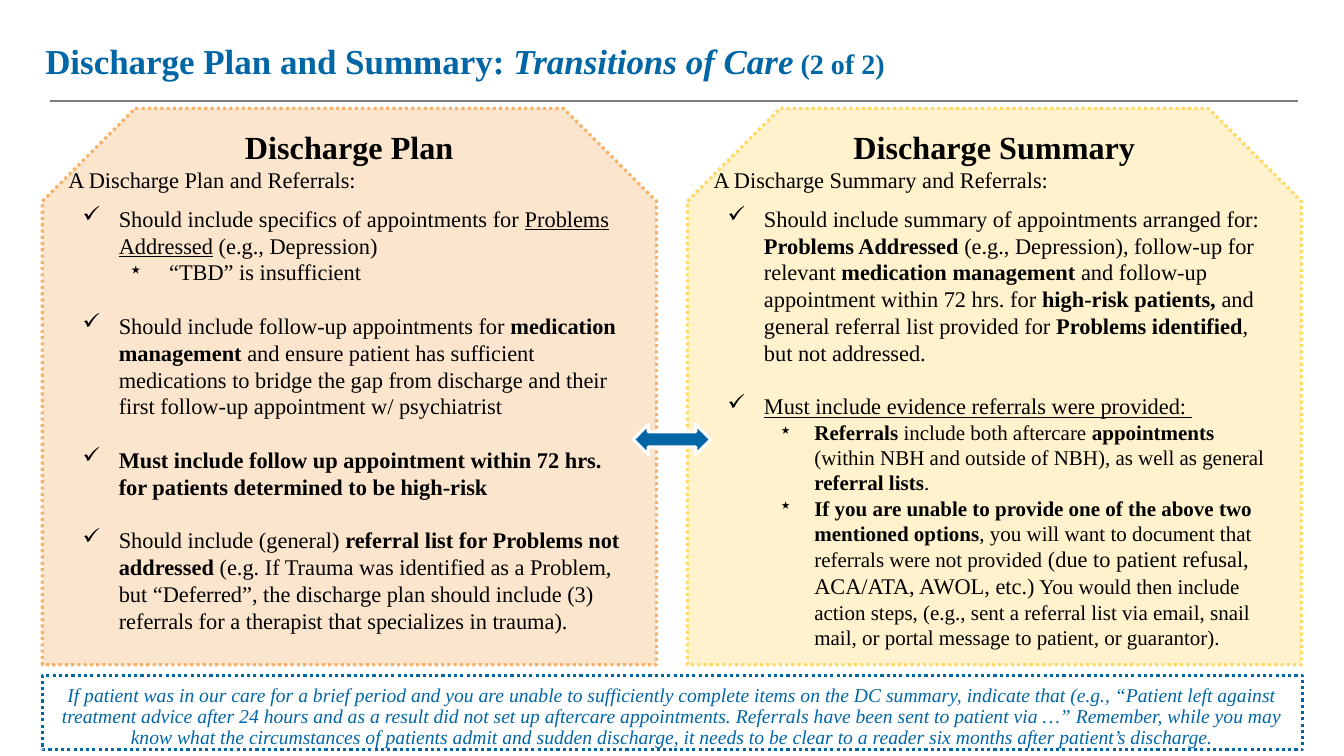
"""Build a slide that sets a discharge plan beside a discharge summary."""
from pptx import Presentation
from pptx.dml.color import RGBColor
from pptx.enum.dml import MSO_LINE_DASH_STYLE as DASH
from pptx.enum.shapes import MSO_CONNECTOR, MSO_SHAPE as SHAPE
from pptx.enum.text import MSO_ANCHOR as ANCHOR, PP_ALIGN as ALIGN
from pptx.oxml.ns import qn
from pptx.util import Inches, Pt
from lxml.etree import SubElement

BLUE = RGBColor(0x00, 0x66, 0xA6)
BLACK = RGBColor(0x00, 0x00, 0x00)
WHITE = RGBColor(0xFF, 0xFF, 0xFF)
GREY = RGBColor(0x7F, 0x7F, 0x7F)
PEACH = RGBColor(0xFC, 0xE5, 0xCD)
ORANGE = RGBColor(0xF6, 0xB2, 0x6B)
CREAM = RGBColor(0xFF, 0xF2, 0xCC)
YELLOW = RGBColor(0xFF, 0xD9, 0x66)

FONT = "Times New Roman"
WIDTH, HEIGHT = Inches(13.33), Inches(7.5)
LEFT, TOP, PITCH = 3.15, 14.33, 48
PANEL_W, PANEL_H, PAD = 45.69, 73.6, 1.2
GAP, INTRO_GAP = 19, 8.5
STYLES = {"b": {"bold": True}, "i": {"italic": True}, "u": {"underline": True}}
BULLETS = {"check": ("✓", 0, 0.5, 0.36),
           "star": ("⋆", 1, 1, 0.4),
           "small star": ("⋆", 1, 1, 0.35)}

PLAN = [
    ("check", INTRO_GAP, 16, [
        ("Should include specifics of appointments for ", ""),
        ("Problems Addressed", "u"), (" (e.g., Depression)", "")]),
    ("star", 0, 16, [("“TBD” is insufficient", "")]),
    ("check", GAP, 16, [
        ("Should include follow-up appointments for ", ""),
        ("medication management ", "b"),
        ("and ensure patient has sufficient medications to bridge the gap from "
         "discharge and their first follow-up appointment w/ psychiatrist", "")]),
    ("check", GAP, 16, [
        ("Must include follow up appointment within 72 hrs. for patients "
         "determined to be high-risk", "b")]),
    ("check", GAP, 16, [
        ("Should include (general) ", ""),
        ("referral list for Problems not addressed ", "b"),
        ("(e.g. If Trauma was identified as a Problem, but “Deferred”, the "
         "discharge plan should include (3) referrals for a therapist that "
         "specializes in trauma).", "")]),
]
SUMMARY = [
    ("check", INTRO_GAP, 16, [
        ("Should include summary of appointments arranged for: ", ""),
        ("Problems Addressed ", "b"),
        ("(e.g., Depression), follow-up for relevant ", ""),
        ("medication management ", "b"),
        ("and follow-up appointment within 72 hrs. for ", ""),
        ("high-risk patients, ", "b"),
        ("and general referral list provided for ", ""),
        ("Problems identified", "b"), (", but not addressed.", "")]),
    ("check", GAP, 16, [
        ("Must include evidence referrals were provided: ", "u")]),
    ("small star", 0, 15, [
        ("Referrals", "b"), (" include both aftercare ", ""),
        ("appointments", "b"),
        (" (within NBH and outside of NBH), as well as general ", ""),
        ("referral lists", "b"), (".", "")]),
    ("small star", 0, 15, [
        ("If you are unable to provide one of the above two mentioned options",
         "b"),
        (", you will want to document that referrals were not provided", ""),
        (" (due to patient refusal, ACA/ATA, AWOL, etc.)", "", 16),
        (" You would then include action steps, (e.g., sent a referral list via "
         "email, snail mail, or portal message to patient, or guarantor).", "")]),
]
NOTE = (
    "If patient was in our care for a brief period and you are unable to "
    "sufficiently complete items on the DC summary, indicate that (e.g., “Patient "
    "left against treatment advice after 24 hours and as a result did not set up "
    "aftercare appointments. Referrals have been sent to patient via …” Remember, "
    "while you may know what the circumstances of patients admit and sudden "
    "discharge, it needs to be clear to a reader six months after patient’s "
    "discharge.")


def set_all(target, values):
    """Set each attribute of target from a dict."""
    for name, value in values.items():
        setattr(target, name, value)


def place(x, y, w, h):
    """Turn percentages of the slide's size into lengths."""
    return [int(side * share / 100)
            for side, share in zip((WIDTH, HEIGHT, WIDTH, HEIGHT), (x, y, w, h))]


def add_runs(p, runs, size, color=BLACK):
    """Add styled runs to a paragraph; a run may carry its own size."""
    for text, style, *own in runs:
        r = p.add_run()
        r.text = text
        set_all(r.font, {"name": FONT, "size": Pt(own[0] if own else size)})
        r.font.color.rgb = color
        for letter in style:
            set_all(r.font, STYLES[letter])


def add_bullet(p, kind):
    """Give a paragraph its bullet, level and hanging indent."""
    char, level, left, hang = BULLETS[kind]
    p.level = level
    pPr = p._p.get_or_add_pPr()
    pPr.set("marL", str(Inches(left)))
    pPr.set("indent", str(-Inches(hang)))
    SubElement(SubElement(pPr, qn("a:buClr")), qn("a:srgbClr"), val=str(BLACK))
    SubElement(pPr, qn("a:buChar"), char=char)


def format_frame(sp, inset_y=0.1, anchor=ANCHOR.TOP):
    """Set wrap, anchor and insets of a shape's text and return its frame."""
    tf = sp.text_frame
    set_all(tf, {"word_wrap": True, "vertical_anchor": anchor,
                 "margin_left": Inches(0.1), "margin_right": Inches(0.1),
                 "margin_top": Inches(inset_y), "margin_bottom": Inches(inset_y)})
    return tf


def add_outlined(s, preset, area, fill, line, dash=None):
    """Add a preset shape with an optional fill and an outline."""
    sp = s.shapes.add_shape(preset, *place(*area))
    sp.shadow.inherit = False
    if fill is None:
        sp.fill.background()
    else:
        sp.fill.solid()
        sp.fill.fore_color.rgb = fill
    sp.line.color.rgb = line
    set_all(sp.line, {"width": Pt(2.25), "dash_style": dash})
    return sp


def add_rule(s):
    """Draw the line below the title."""
    x, y, w, _ = place(3.75, 13.33, 92.8, 0)
    rule = s.shapes.add_connector(MSO_CONNECTOR.STRAIGHT, x, y, x + w, y)
    rule.line.color.rgb = GREY
    rule.line.width = Pt(1.5)
    SubElement(rule._element.spPr, qn("a:effectLst"))


def add_title(s):
    """Add the slide's title."""
    sp = s.shapes.add_textbox(*place(2.63, 3.07, 79.9, 10.67))
    p = format_frame(sp, 0.05, ANCHOR.MIDDLE).paragraphs[0]
    p.line_spacing = 0.9
    add_runs(p, [("Discharge Plan and Summary: ", "b"),
                 ("Transitions of Care", "bi"), (" ", "bi", 20),
                 ("(2 of 2)", "b", 20)], 25, BLUE)


def add_panel(s, column, heading, items, fill, line):
    """Add one snipped panel with its heading, lead-in and bullets."""
    x = LEFT + column * PITCH
    panel = add_outlined(s, SHAPE.SNIP_2_SAME_RECTANGLE,
                         (x, TOP, PANEL_W, PANEL_H), fill, line, DASH.ROUND_DOT)
    panel.adjustments[0] = 0.167
    sp = s.shapes.add_textbox(*place(x + PAD, TOP + PAD, PANEL_W - 2 * PAD,
                                     PANEL_H - 2 * PAD))
    tf = format_frame(sp)
    p = tf.paragraphs[0]
    p.alignment = ALIGN.CENTER
    add_runs(p, [(heading, "b")], 23)
    add_runs(tf.add_paragraph(), [(f"A {heading} and Referrals:", "")], 16)
    for kind, gap, size, runs in items:
        p = tf.add_paragraph()
        p.space_before = Pt(gap)
        add_bullet(p, kind)
        add_runs(p, runs, size)


def add_note(s):
    """Add the dotted note along the foot of the slide."""
    sp = add_outlined(s, SHAPE.RECTANGLE, (LEFT, 89.33, 93.77, 9.87), None, BLUE,
                      DASH.ROUND_DOT)
    p = format_frame(sp).paragraphs[0]
    set_all(p, {"alignment": ALIGN.CENTER, "line_spacing": 0.9})
    add_runs(p, [(NOTE, "i")], 14, BLUE)


def main():
    """Build and save the slide."""
    prs = Presentation()
    set_all(prs, {"slide_width": WIDTH, "slide_height": HEIGHT})
    s = prs.slides.add_slide(prs.slide_layouts[6])
    add_rule(s)
    add_panel(s, 0, "Discharge Plan", PLAN, PEACH, ORANGE)
    add_panel(s, 1, "Discharge Summary", SUMMARY, CREAM, YELLOW)
    add_title(s)
    add_note(s)
    add_outlined(s, SHAPE.LEFT_RIGHT_ARROW, (47.11, 56.13, 5.78, 4), BLUE, WHITE)
    prs.save("out.pptx")


if __name__ == "__main__":
    main()
